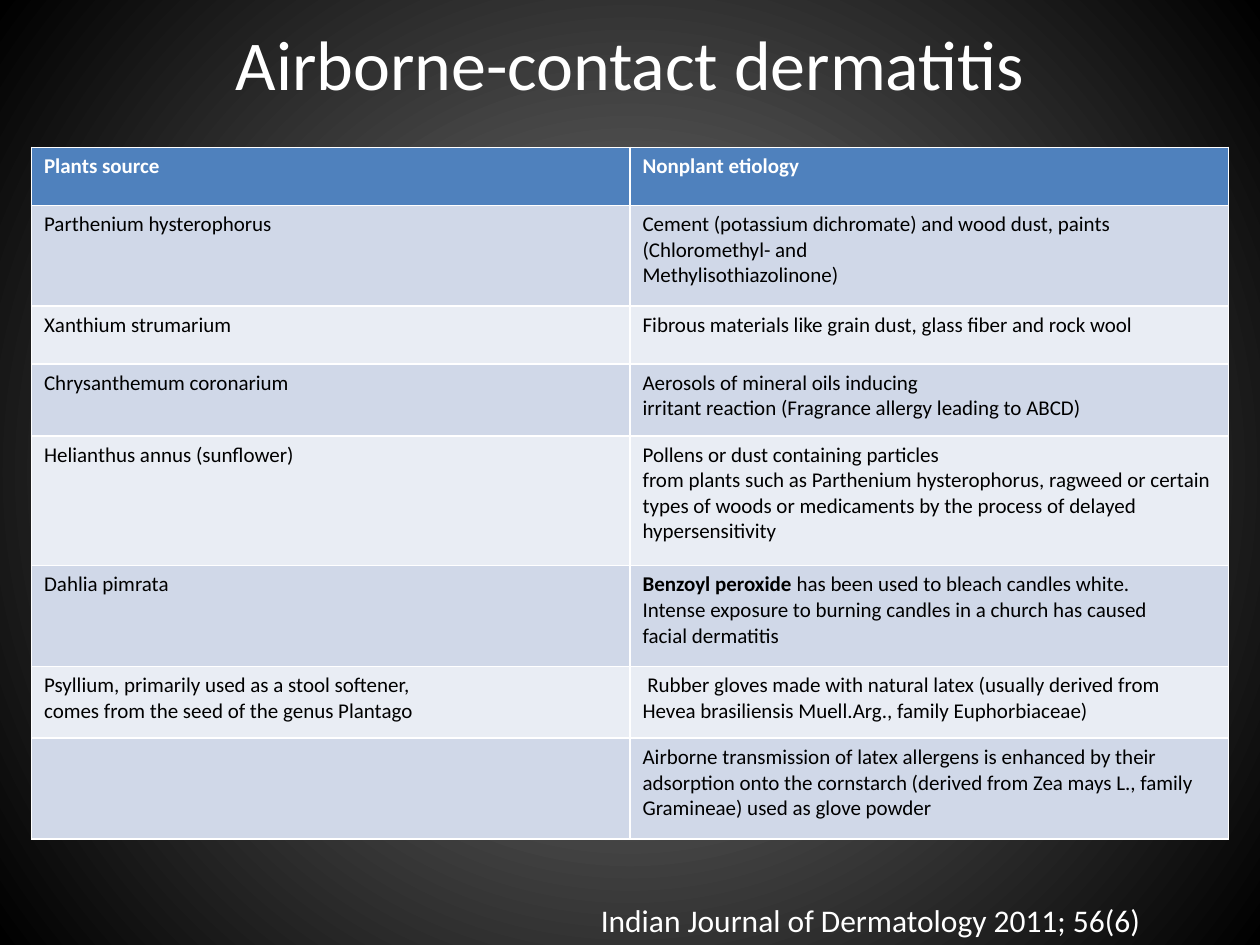
from pptx import Presentation
from pptx.dml.color import RGBColor
from pptx.enum.text import MSO_ANCHOR as Anchor, PP_ALIGN as Align
from pptx.oxml import parse_xml
from pptx.oxml.ns import nsdecls
from pptx.util import Inches, Pt


def tint(code):
    return RGBColor.from_string(code)


def add_run(para, text, size, color, bold=False):
    run = para.add_run()
    run.text = text
    font = run.font
    font.name, font.size, font.bold = "Calibri", Pt(size), bold
    font.color.rgb = tint(color)


prs = Presentation()
prs.slide_width, prs.slide_height = Inches(10), Inches(7.5)
slide = prs.slides.add_slide(prs.slide_layouts[5])

# Background: radial gradient, grey centre to black corners
back = slide.background.fill
back.gradient()
for stop, code, pos in zip(back.gradient_stops, ("7F7F7F", "000000"), (0, 1)):
    stop.color.rgb = tint(code)
    stop.position = pos
lin = slide.element.xpath(".//a:gradFill/a:lin")[0]
lin.getparent().replace(lin, parse_xml(
    f'<a:path {nsdecls("a")} path="circle">'
    '<a:fillToRect l="50000" t="50000" r="50000" b="50000"/></a:path>'))

# Title
title = slide.shapes.title
title.left, title.top = Inches(0.5), Inches(0)
title.width, title.height = Inches(9), Inches(1)
title.text_frame.vertical_anchor = Anchor.MIDDLE
para = title.text_frame.paragraphs[0]
para.alignment = Align.CENTER
add_run(para, "Airborne-contact dermatitis", 40, "FFFFFF")

# Table rows: height, plant lines, other lines
rows = [
    (0.46, ["Plants source"], ["Nonplant etiology"]),
    (0.8, ["Parthenium hysterophorus"],
     ["Cement (potassium dichromate) and wood dust, paints (Chloromethyl- and",
      "Methylisothiazolinone)"]),
    (0.46, ["Xanthium strumarium"],
     ["Fibrous materials like grain dust, glass fiber and rock wool"]),
    (0.57, ["Chrysanthemum coronarium"],
     ["Aerosols of mineral oils inducing",
      "irritant reaction (Fragrance allergy leading to ABCD)"]),
    (1.03, ["Helianthus annus (sunflower)"],
     ["Pollens or dust containing particles",
      "from plants such as Parthenium hysterophorus, ragweed or certain types "
      "of woods or medicaments by the process of delayed hypersensitivity"]),
    (0.8, ["Dahlia pimrata"],
     ["Benzoyl peroxide |has been used to bleach candles white.",
      "Intense exposure to burning candles in a church has caused",
      "facial dermatitis"]),
    (0.57, ["Psyllium, primarily used as a stool softener,",
            "comes from the seed of the genus Plantago"],
     [" Rubber gloves made with natural latex (usually derived from Hevea "
      "brasiliensis Muell.Arg., family Euphorbiaceae)"]),
    (0.8, [],
     ["Airborne transmission of latex allergens is enhanced by their adsorption "
      "onto the cornstarch (derived from Zea mays L., family Gramineae) used as "
      "glove powder"]),
]

# Table: the default style supplies the white borders
table = slide.shapes.add_table(len(rows), 2, Inches(0.25), Inches(1.17),
                               Inches(9.5), Inches(5.49)).table
for r, (height, *cells) in enumerate(rows):
    table.rows[r].height = Inches(height)
    head = r == 0
    fill = "4F81BD" if head else ("E9EDF4", "D0D8E8")[r % 2]
    ink = "FFFFFF" if head else "000000"
    for c, lines in enumerate(cells):
        cell = table.cell(r, c)
        cell.fill.solid()
        cell.fill.fore_color.rgb = tint(fill)
        frame = cell.text_frame
        for i, line in enumerate(lines):
            para = frame.add_paragraph() if i else frame.paragraphs[0]
            # Text before a bar is bold
            lead, bar, rest = line.rpartition("|")
            if bar:
                add_run(para, lead, 12, ink, True)
            add_run(para, rest, 12, ink, head)

# Citation
box = slide.shapes.add_textbox(Inches(4.67), Inches(7.1), Inches(4.54), Inches(0.4))
box.text_frame.word_wrap = False
add_run(box.text_frame.paragraphs[0],
        "Indian Journal of Dermatology 2011; 56(6)", 18, "FFFFFF")

prs.save("out.pptx")
